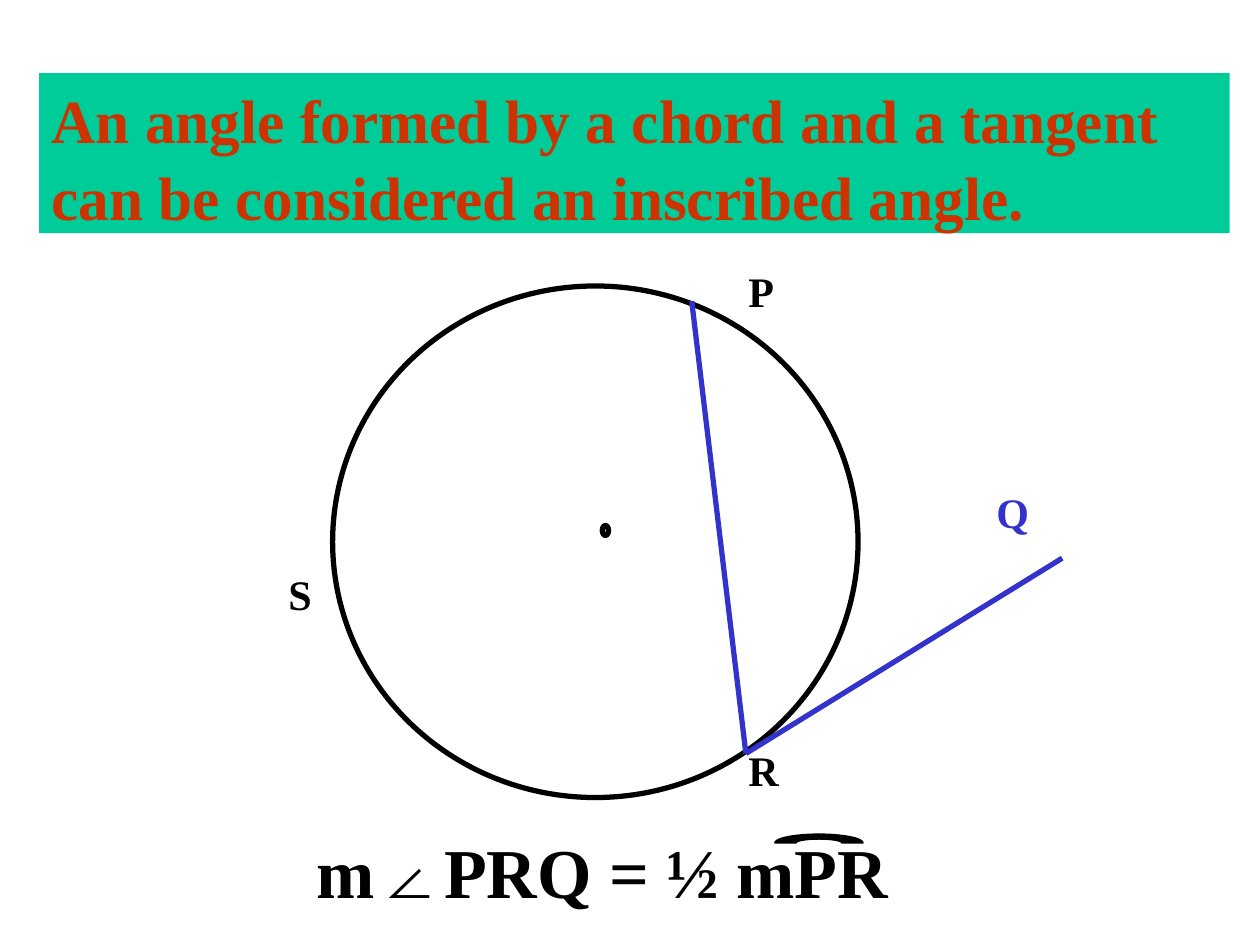
import math

from lxml import etree
from pptx import Presentation
from pptx.dml.color import RGBColor
from pptx.enum.shapes import MSO_CONNECTOR, MSO_SHAPE
from pptx.enum.text import MSO_ANCHOR, MSO_AUTO_SIZE, PP_ALIGN
from pptx.oxml.ns import qn
from pptx.util import Inches, Pt

OVAL = MSO_SHAPE.OVAL
STRAIGHT = MSO_CONNECTOR.STRAIGHT
TOP, LEFT = MSO_ANCHOR.TOP, PP_ALIGN.LEFT
NO_FIT = MSO_AUTO_SIZE.NONE
TITLE_ONLY = 5

FONT = "Times New Roman"
BLACK, BLUE, RED, GREEN = "000000", "3333CC", "CC3300", "00CC99"
STROKE = 3
R_POINT = (5.92, 5.98)


def rgb(color):
    return RGBColor.from_string(color)


def write(shape, text, size, color):
    tf = shape.text_frame
    tf.word_wrap = True
    tf.auto_size = NO_FIT
    tf.vertical_anchor = TOP
    tf.text = text
    p = tf.paragraphs[0]
    p.alignment = LEFT
    p.font.name = FONT
    p.font.size = Pt(size)
    p.font.bold = True
    p.font.color.rgb = rgb(color)
    return p


def add_title(s, text, left, top, width, height):
    title = s.shapes.title
    title.left, title.top = Inches(left), Inches(top)
    title.width, title.height = Inches(width), Inches(height)
    title.fill.solid()
    title.fill.fore_color.rgb = rgb(GREEN)
    write(title, text, 35, RED).line_spacing = 1.04


def add_label(s, text, left, top, width=0.52, height=0.5, size=24, color=BLACK):
    box = s.shapes.add_textbox(*map(Inches, (left, top, width, height)))
    write(box, text, size, color)


def add_circle(s, left, top, width, height):
    sp = s.shapes.add_shape(OVAL, *map(Inches, (left, top, width, height)))
    sp.shadow.inherit = False
    sp.fill.background()
    sp.line.color.rgb = rgb(BLACK)
    sp.line.width = Pt(STROKE)


def add_segment(s, start, end):
    line = s.shapes.add_connector(STRAIGHT, *map(Inches, start + end))
    line.line.color.rgb = rgb(BLUE)
    line.line.width = Pt(STROKE)
    etree.SubElement(line._element.spPr, qn("a:effectLst"))


def half_ellipse(cx, cy, rx, ry, steps=32):
    """Points of the upper half of an ellipse, from left to right."""
    angles = [math.pi * (1 - i / steps) for i in range(steps + 1)]
    return [(Inches(cx + rx * math.cos(a)), Inches(cy - ry * math.sin(a)))
            for a in angles]


def add_arc_mark(s, cx, cy, outer, inner):
    """Crescent over the letters that name an arc."""
    points = half_ellipse(cx, cy, *outer) + half_ellipse(cx, cy, *inner)[::-1]
    builder = s.shapes.build_freeform(*points[0])
    builder.add_line_segments(points[1:], close=True)
    sp = builder.convert_to_shape()
    sp.shadow.inherit = False
    sp.fill.solid()
    sp.fill.fore_color.rgb = rgb(BLACK)
    sp.line.color.rgb = rgb(BLACK)
    sp.line.width = Pt(0.75)


def main():
    prs = Presentation()
    prs.slide_width, prs.slide_height = Inches(10), Inches(7.5)
    s = prs.slides.add_slide(prs.slide_layouts[TITLE_ONLY])

    add_title(s, "An angle formed by a chord and a tangent "
                 "can be considered an inscribed angle.", 0.31, 0.58, 9.45, 1.27)

    add_circle(s, 2.64, 2.27, 4.17, 4.06)
    add_segment(s, R_POINT, (5.49, 2.39))
    for text, left, top in (("R", 5.84, 5.86), ("S", 2.19, 4.46), ("P", 5.84, 2.06)):
        add_label(s, text, left, top)
    add_circle(s, 4.78, 4.17, 0.05, 0.08)
    add_label(s, "Q", 7.81, 3.81, width=0.86, color=BLUE)
    add_segment(s, (8.43, 4.43), R_POINT)

    add_label(s, "m∠PRQ = ½ mPR", 2.41, 6.53, 5.22, 0.77, size=40)
    add_arc_mark(s, 6.5, 6.69, outer=(0.35, 0.07), inner=(0.18, 0.03))

    prs.save("out.pptx")


if __name__ == "__main__":
    main()
